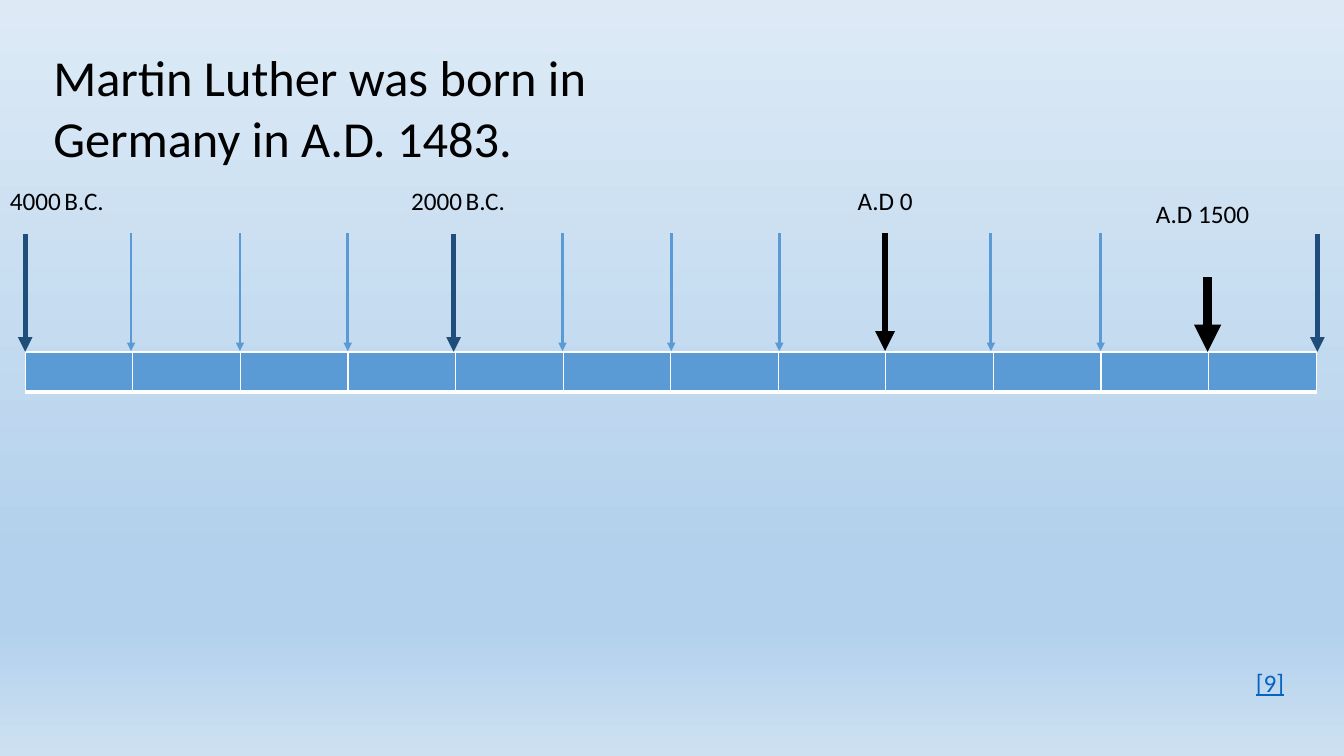
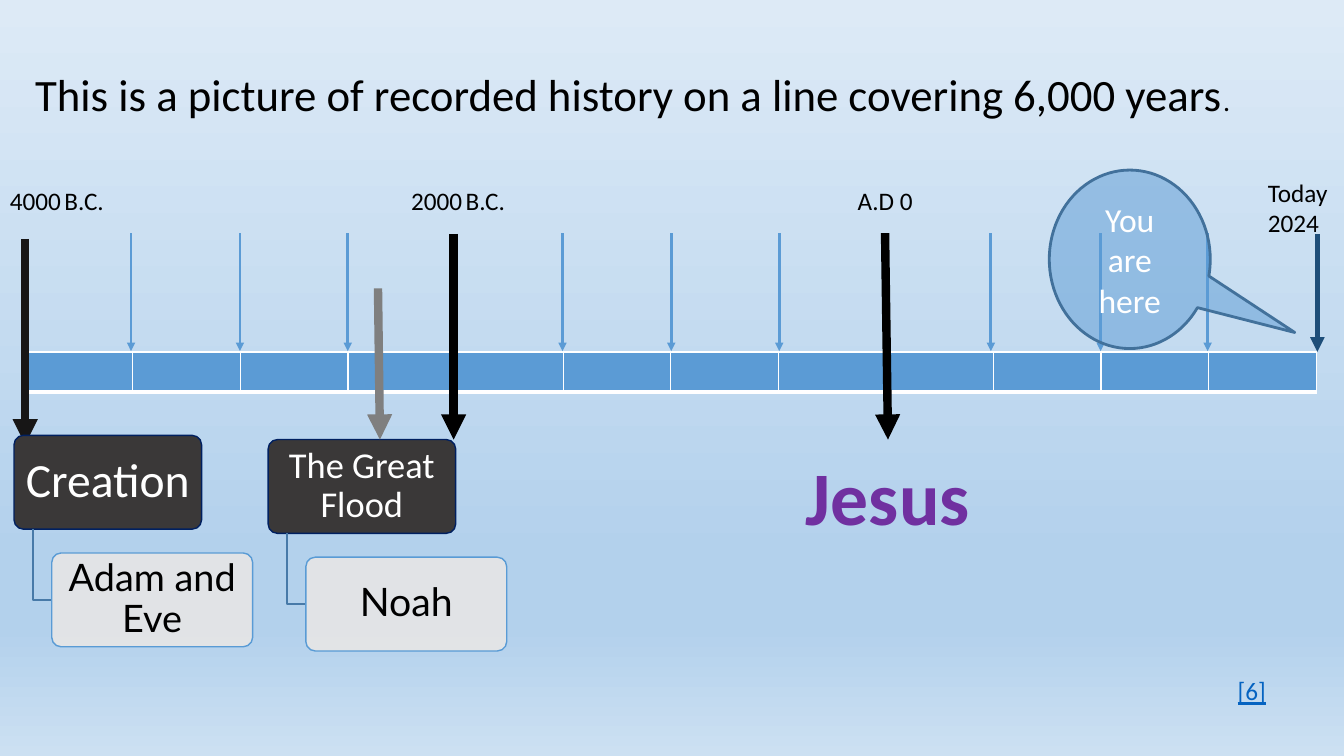
from lxml.etree import SubElement
from pptx import Presentation
from pptx.dml.color import RGBColor
from pptx.enum.shapes import MSO_CONNECTOR as CONN, MSO_SHAPE as SHAPE
from pptx.enum.text import MSO_ANCHOR as ANCHOR, PP_ALIGN as ALIGN
from pptx.oxml.ns import qn
from pptx.util import Pt

BLACK, WHITE, BLUE, NAVY = "000000", "FFFFFF", "5B9BD5", "1E4E79"
LINK, DARK, GRAY, PURPLE = "0563C1", "3A3838", "7F7F7F", "7030A0"
SKY = [(0, "DDEAF6"), (74, "B3D1EC"), (83, "B3D1EC"), (100, "CCE0F2")]
BAR_X, BAR_Y, BAR_W, BAR_H, SPANS = 18, 251.5, 922.5, 28.5, 12
TICKS = [18, 93.6, 171.4, 248.4, 324, 401.8, 479.5, 556.6, 632.2, 707.8, 786.2, 862.6, 941]
TICK_TOP, TICK_END = 166.5, 250.8
ERAS = [(0, 98, "4000", "B.C."), (286.5, 95, "2000", "B.C."), (605.5, 58.5, "A.D 0", "")]


def rgb(color):
    return RGBColor.from_string(color)


class Deck:
    """Holds the timeline style and the current slide."""

    def __init__(self):
        self.prs = Presentation()
        self.prs.slide_width, self.prs.slide_height = Pt(960), Pt(540)
        fill = self.prs.slide_master.background.fill
        fill.gradient()
        fill.gradient_angle = 270
        stops = self.prs.slide_master.element.find(".//" + qn("a:gsLst"))
        for old in list(stops):
            stops.remove(old)
        for pos, color in SKY:
            gs = SubElement(stops, qn("a:gs"), pos=str(pos * 1000))
            SubElement(gs, qn("a:srgbClr"), val=color)

    def new_slide(self):
        self.s = self.prs.slides.add_slide(self.prs.slide_layouts[6])

    def add_runs(self, sp, runs, color=BLACK, font="Calibri", align=ALIGN.LEFT,
                 anchor=ANCHOR.TOP, inset=(7.2, 3.6), spacing=None, bold=False, underline=False):
        tf = sp.text_frame
        tf.word_wrap = True
        tf.vertical_anchor = anchor
        tf.margin_left = tf.margin_right = Pt(inset[0])
        tf.margin_top = tf.margin_bottom = Pt(inset[1])
        p = tf.paragraphs[0]
        p.alignment = align
        p.line_spacing = spacing
        for text, size in runs:
            r = p.add_run()
            r.text = text
            r.font.name, r.font.size = font, Pt(size)
            r.font.color.rgb = rgb(color)
            r.font.bold, r.font.underline = bold, underline

    def text(self, x, y, w, h, *runs, **style):
        self.add_runs(self.s.shapes.add_textbox(Pt(x), Pt(y), Pt(w), Pt(h)), runs, **style)

    def shape(self, kind, box, fill, line, width, opacity=100):
        sp = self.s.shapes.add_shape(kind, *map(Pt, box))
        sp.shadow.inherit = False
        sp.fill.solid()
        sp.fill.fore_color.rgb = rgb(fill)
        sp.line.color.rgb = rgb(line)
        sp.line.width = Pt(width)
        if opacity < 100:
            clr = sp.element.spPr.find(qn("a:solidFill"))[0]
            SubElement(clr, qn("a:alpha"), val=str(opacity * 1000))
        return sp

    def arrow(self, x1, y1, x2, y2, color, width):
        c = self.s.shapes.add_connector(CONN.STRAIGHT, Pt(x1), Pt(y1), Pt(x2), Pt(y2))
        c.line.color.rgb = rgb(color)
        c.line.width = Pt(width)
        spPr = c.element.spPr
        SubElement(spPr.find(qn("a:ln")), qn("a:tailEnd"), type="triangle")
        SubElement(spPr, qn("a:effectLst"))

    def bar(self):
        frame = self.s.shapes.add_table(1, SPANS, Pt(BAR_X), Pt(BAR_Y), Pt(BAR_W), Pt(BAR_H))
        for column in frame.table.columns:
            column.width = Pt(BAR_W / SPANS)
        for cell in frame.table.iter_cells():
            cell.margin_top = cell.margin_bottom = 0
            tcPr = cell._tc.get_or_add_tcPr()
            for side, width in (("L", 1), ("R", 1), ("T", 1), ("B", 3)):
                ln = SubElement(tcPr, qn("a:ln" + side), w=str(int(Pt(width))))
                SubElement(SubElement(ln, qn("a:solidFill")), qn("a:srgbClr"), val=WHITE)
            cell.fill.solid()
            cell.fill.fore_color.rgb = rgb(BLUE)

    def timeline(self, special):
        self.bar()
        for i, x in enumerate(TICKS):
            top, end_x, end, color, width = special.get(i, (TICK_TOP, x, TICK_END, BLUE, 2))
            self.arrow(x, top, end_x, end, color, width)
        for x, w, year, era in ERAS:
            runs = [(year, 18)] + ([(" ", 11), (era, 18)] if era else [])
            self.text(x, 129, w, 29, *runs)

    def card(self, box, fill, line, run, opacity=100, **style):
        sp = self.shape(SHAPE.ROUNDED_RECTANGLE, box, fill, line, 1, opacity)
        sp.adjustments[0] = 0.1
        self.add_runs(sp, [run], align=ALIGN.CENTER, anchor=ANCHOR.MIDDLE,
                      inset=(4, 3), spacing=0.9, **style)

    def event(self, x, y, name, people):
        h, stem, child_x, child_y = 67, x + 13.5, x + 27, y + 84
        self.card((x, y, 134, h), DARK, "002060", name, color=WHITE)
        fb = self.s.shapes.build_freeform(Pt(stem), Pt(y + h))
        middle = Pt(child_y + h / 2)
        fb.add_line_segments([(Pt(stem), middle), (Pt(child_x), middle)], close=False)
        sp = fb.convert_to_shape()
        sp.shadow.inherit = False
        sp.fill.background()
        sp.line.color.rgb = rgb("487AA8")
        sp.line.width = Pt(1)
        self.card((child_x, child_y, 143.5, h), "E7E6E6", "599BD5", people, 90, font="Lato")

    def callout(self, box, tip, run):
        sp = self.shape(SHAPE.OVAL_CALLOUT, box, BLUE, "42719B", 2, 50)
        sp.adjustments[0], sp.adjustments[1] = tip
        self.add_runs(sp, [run], color=WHITE, align=ALIGN.CENTER, anchor=ANCHOR.MIDDLE)

    def reference(self, x, y, label):
        self.text(x, y, 42, 29, (label, 18), color=LINK, underline=True)


def main():
    deck = Deck()
    today = (167, 941, 251.3, NAVY, 3.5)

    deck.new_slide()
    deck.timeline({
        0: (167, 18, 251.3, NAVY, 3.5),
        4: (167, 324, 251.3, NAVY, 3.5),
        8: (TICK_TOP, 632.2, TICK_END, BLACK, 4.75),
        11: (198, 862.6, 251.3, BLACK, 6.5),
        12: today,
    })
    deck.text(31, 29.5, 448.5, 94.5, ("Martin Luther was born in Germany in A.D. 1483.", 36))
    deck.text(818.6, 138.2, 91, 29, ("A.D 1500", 18))
    deck.reference(890, 473, "[9]")

    deck.new_slide()
    deck.timeline({
        0: (170.6, 18, 317.5, "171616", 6),
        4: (167, 324, 314, BLACK, 6),
        8: (TICK_TOP, 634.3, 314, BLACK, 6),
        12: today,
    })
    deck.text(898.6, 123.1, 81.4, 51, ("Today 2024", 18))
    deck.text(18, 44, 910, 46,
              ("This is a picture of recorded history on a line covering 6,000 years", 32), (".", 20))
    deck.event(10, 311, ("Creation", 34), ("Adam and Eve", 27))
    deck.callout((749.5, 121.5, 115, 127.5), (1.025, 0.41), ("You are here", 24))
    deck.event(191.5, 314, ("The Great Flood", 26), ("Noah", 28))
    deck.arrow(270, 206, 271.4, 314, GRAY, 6)
    deck.reference(877, 479, "[6]")
    deck.text(568, 318, 132.5, 73, ("Jesus", 54), color=PURPLE, align=ALIGN.CENTER, bold=True)

    deck.prs.save("out.pptx")


if __name__ == "__main__":
    main()
